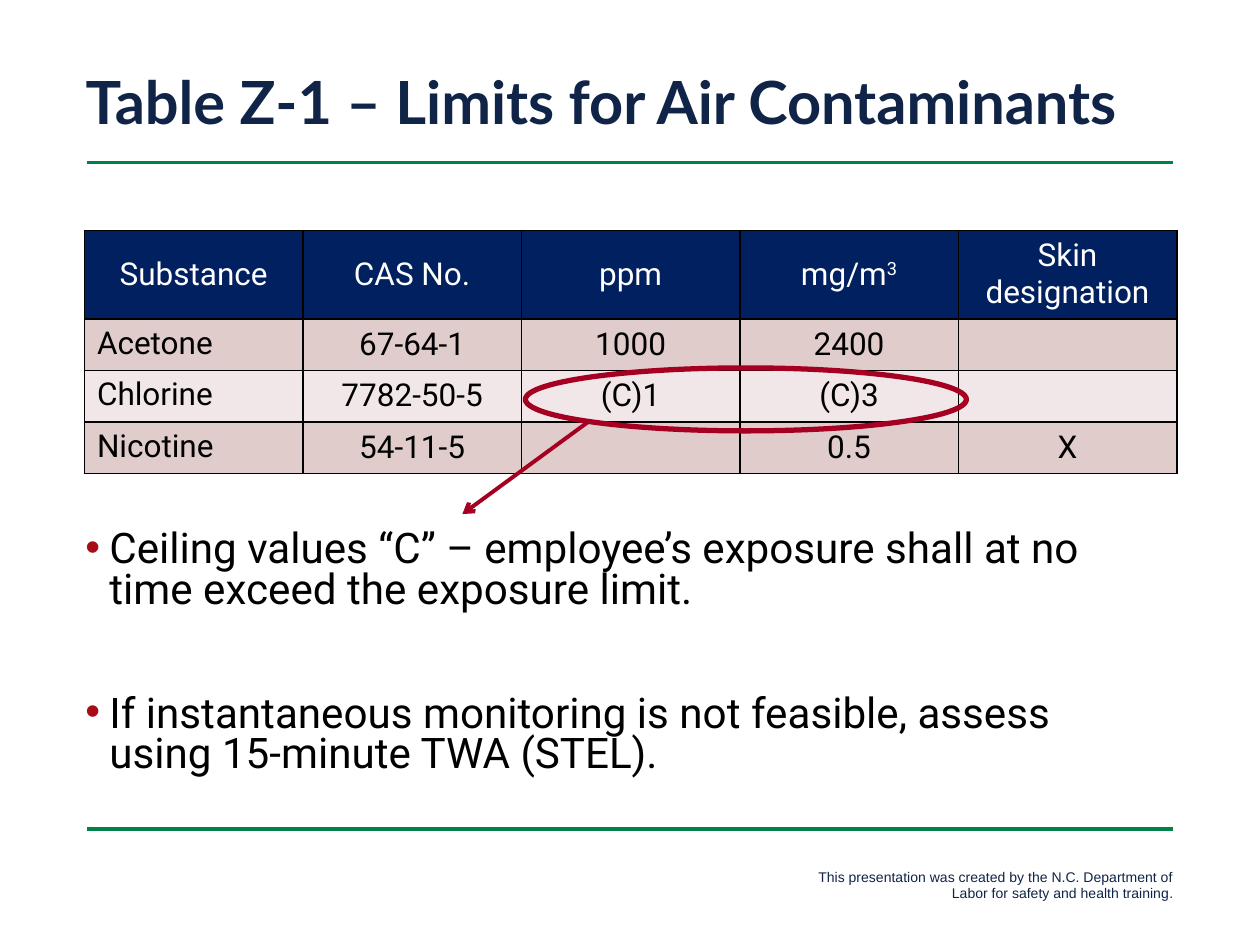
"""Build the slide on Table Z-1 limits for air contaminants."""
from lxml import etree
from pptx import Presentation
from pptx.dml.color import RGBColor
from pptx.enum.shapes import MSO_CONNECTOR, MSO_SHAPE
from pptx.enum.text import MSO_ANCHOR as ANCHOR, PP_ALIGN as ALIGN
from pptx.oxml.ns import qn
from pptx.util import Inches, Pt

COLORS = {
    "navy": "102447", "purple": "2B0E62", "green": "00814A", "red": "A50021",
    "bullet": "A70D15", "header": "002060", "odd": "E1CCCC", "even": "F1E7E8",
    "black": "000000", "white": "FFFFFF",
}
ROWS = [
    ["Substance", "CAS No.", "ppm", "mg/m^3", "Skin designation"],
    ["Acetone", "67-64-1", "1000", "2400", ""],
    ["Chlorine", "7782-50-5", "(C)1", "(C)3", ""],
    ["Nicotine", "54-11-5", "", "0.5", "X"],
]
NOTES = [
    "Ceiling values “C” – employee’s exposure shall at no time exceed the exposure limit.",
    "If instantaneous monitoring is not feasible, assess using 15-minute TWA (STEL).",
]


def rgb(name):
    return RGBColor.from_string(COLORS[name])


def sub(parent, tag, **attrs):
    return etree.SubElement(parent, qn(tag), attrs)


class SlideBuilder:
    """Holds the text style and the current slide."""

    def __init__(self, slide, font="Roboto"):
        self.slide = slide
        self.shapes = slide.shapes
        self.font = font

    def run(self, p, text, size, color, font=None, bold=False):
        r = p.add_run()
        r.text = text
        r.font.name = font or self.font
        r.font.size = Pt(size)
        r.font.bold = bold
        r.font.color.rgb = rgb(color)
        return r

    def title(self, text, box):
        sp = self.shapes.title
        sp.left, sp.top, sp.width, sp.height = map(Inches, box)
        tf = sp.text_frame
        tf.word_wrap = True
        tf.vertical_anchor = ANCHOR.TOP
        tf.margin_top = Inches(0.08)
        p = tf.paragraphs[0]
        p.alignment = ALIGN.LEFT
        p.line_spacing = 0.9
        self.run(p, text, 34, "navy", "Lato", True)

    def text_box(self, box):
        tf = self.shapes.add_textbox(*map(Inches, box)).text_frame
        tf.word_wrap = True
        return tf

    def footer(self, runs, box):
        p = self.text_box(box).paragraphs[0]
        p.alignment = ALIGN.RIGHT
        for text, color in runs:
            self.run(p, text, 8, color, "Arial")

    def bullets(self, items, box, gap):
        tf = self.text_box(box)
        for i, text in enumerate(items):
            p = tf.add_paragraph() if i else tf.paragraphs[0]
            p.line_spacing = 0.8
            p.space_before = Pt(gap if i else 0)
            pPr = p._p.get_or_add_pPr()
            indent = Inches(0.19)
            pPr.set("marL", str(indent))
            pPr.set("indent", str(-indent))
            sub(sub(pPr, "a:buClr"), "a:srgbClr", val=COLORS["bullet"])
            sub(pPr, "a:buFont", typeface="Arial")
            sub(pPr, "a:buChar", char="•")
            self.run(p, text, 24.1, "black")

    def line(self, start, end, color, width, arrow=False):
        cx = self.shapes.add_connector(
            MSO_CONNECTOR.STRAIGHT, *map(Inches, start + end))
        cx.line.color.rgb = rgb(color)
        cx.line.width = Pt(width)
        if arrow:
            sub(cx.line._get_or_add_ln(), "a:tailEnd", type="arrow")
        sub(cx._element.spPr, "a:effectLst")

    def ellipse(self, box, color, width):
        sp = self.shapes.add_shape(MSO_SHAPE.OVAL, *map(Inches, box))
        sp.shadow.inherit = False
        sp.fill.background()
        sp.line.color.rgb = rgb(color)
        sp.line.width = Pt(width)

    def cell(self, cell, text, fill, color, label):
        tcPr = cell._tc.get_or_add_tcPr()
        for side in ("a:lnL", "a:lnR", "a:lnT", "a:lnB"):
            ln = sub(tcPr, side, w=str(Pt(1)))
            sub(sub(ln, "a:solidFill"), "a:srgbClr", val=COLORS["black"])
        cell.fill.solid()
        cell.fill.fore_color.rgb = rgb(fill)
        cell.vertical_anchor = ANCHOR.TOP if label else ANCHOR.MIDDLE
        p = cell.text_frame.paragraphs[0]
        p.alignment = ALIGN.LEFT if label else ALIGN.CENTER
        p.font.size = Pt(18)
        base, _, power = text.partition("^")
        if base:
            self.run(p, base, 18, color)
        if power:
            r = self.run(p, power, 18, color)
            r.font._element.set("baseline", "30000")

    def table(self, rows, box, row_height):
        table = self.shapes.add_table(
            len(rows), len(rows[0]), *map(Inches, box)).table
        for i, row in enumerate(rows):
            table.rows[i].height = Inches(row_height)
            fill = "header" if i == 0 else "odd" if i % 2 else "even"
            color = "black" if i else "white"
            for j, text in enumerate(row):
                self.cell(table.cell(i, j), text, fill, color, i > 0 and j == 0)


def main():
    prs = Presentation()
    prs.slide_width, prs.slide_height = Inches(10), Inches(7.5)
    s = SlideBuilder(prs.slides.add_slide(prs.slide_layouts[5]))
    for y in (1.29, 6.58):
        s.line((0.69, y), (9.31, y), "green", 2)
    s.footer([("This presentation was created by the N.C. Department of Labor "
               "for safety and health training", "navy"), (".", "purple")],
             (6.16, 6.84, 3.25, 0.37))
    s.table(ROWS, (0.67, 1.83, 8.67, 1.62), 0.41)
    s.ellipse((4.17, 2.92, 3.5, 0.5), "red", 3)
    s.line((4.68, 3.34), (3.67, 4.08), "red", 2.25, arrow=True)
    s.bullets(NOTES, (0.58, 4.17, 8.75, 2.17), gap=47.5)
    s.title("Table Z-1 – Limits for Air Contaminants", (0.58, 0.5, 9.25, 1.18))
    prs.save("out.pptx")


if __name__ == "__main__":
    main()
